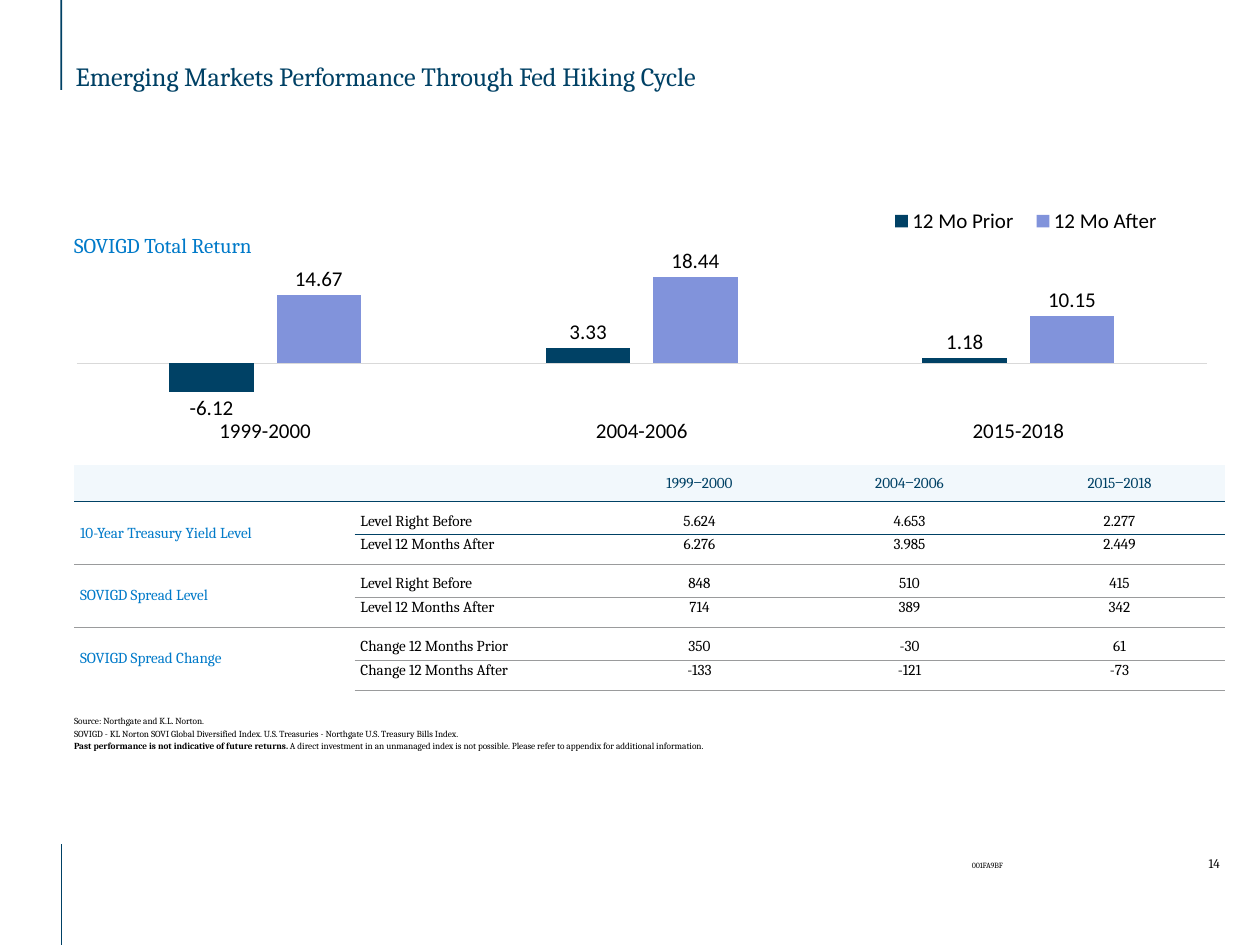
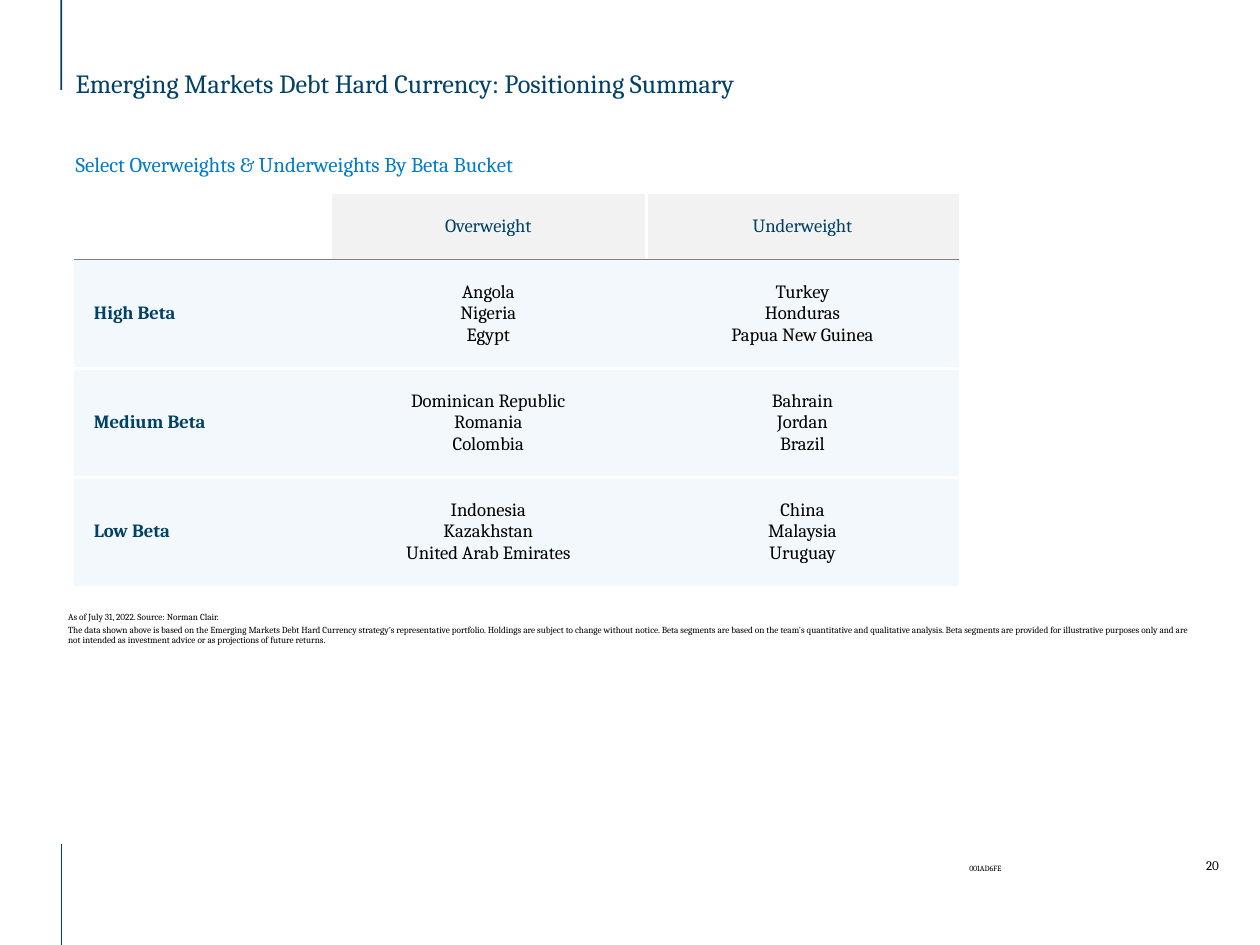
import pptx
import pptx.chart.data
import pptx.dml.color
import pptx.enum.chart
import pptx.enum.shapes
import pptx.enum.text
import pptx.oxml
import pptx.oxml.ns
import pptx.util
from lxml import etree

Cm, Pt = pptx.util.Cm, pptx.util.Pt
RGB = pptx.dml.color.RGBColor
ALIGN = pptx.enum.text.PP_ALIGN
ANCHOR = pptx.enum.text.MSO_ANCHOR
qn = pptx.oxml.ns.qn

# Colours
NAVY = RGB(0x00, 0x41, 0x65)
BLUE = RGB(0x00, 0x7A, 0xC9)
LILAC = RGB(0x81, 0x93, 0xDB)
PALE = RGB(0xF2, 0xF8, 0xFC)
MIST = RGB(0xF2, 0xF2, 0xF2)
SILVER = RGB(0xD9, 0xD9, 0xD9)
ASH = RGB(0x9A, 0x9B, 0x9C)
GREY = RGB(0x80, 0x80, 0x80)
WHITE = RGB(0xFF, 0xFF, 0xFF)
BLACK = RGB(0, 0, 0)

# Text formats
TITLE = dict(name="Cambria", size=Pt(22.5), rgb=NAVY)
HEAD = dict(name="Cambria", size=Pt(18), rgb=BLUE)
NOTE = dict(name="Cambria", size=Pt(7.9), rgb=BLACK)
CODE = dict(name="Cambria", size=Pt(6.8), rgb=BLACK)
PAGE = dict(name="Cambria", size=Pt(11.2), rgb=BLACK)
CELL = dict(name="Cambria", size=Pt(13), rgb=BLACK)
BIG = CELL | dict(size=Pt(16))
CHART = dict(name="Calibri", size=Pt(18), rgb=BLACK)

LEFT = 2.24
NO_STYLE = "{2D5ABB26-0587-4C30-8999-92F81FD0307C}"


def style(font, form):
    for key, val in form.items():
        setattr(font.color if key == "rgb" else font, key, val)


def fill_text(frame, paras, form, look=None, track=0):
    """Each paragraph is a list of (text, extra format) runs or a string."""
    for num, runs in enumerate(paras):
        para = frame.add_paragraph() if num else frame.paragraphs[0]
        for key, val in (look or {}).items():
            setattr(para, key, val)
        for text, extra in [(runs, {})] if isinstance(runs, str) else runs:
            run = para.add_run()
            run.text = text
            style(run.font, form | extra)
            if track:
                run._r.get_or_add_rPr().set("spc", str(track))


def add_text(slide, box, paras, form, look=None, track=0, inset=(0, 0),
             anchor=ANCHOR.TOP):
    frame = slide.shapes.add_textbox(*map(Cm, box)).text_frame
    left, top = map(Cm, inset)
    attrs = dict(word_wrap=True, vertical_anchor=anchor, margin_left=left,
                 margin_top=top, margin_right=0, margin_bottom=0)
    for key, val in attrs.items():
        setattr(frame, key, val)
    fill_text(frame, paras, form, look, track)


def add_note(slide, left, top, paras):
    look = dict(line_spacing=0.95, space_after=Pt(1.5))
    add_text(slide, (left, top, 33.96, 1.27), paras, NOTE, look, -3,
             anchor=ANCHOR.BOTTOM)


def add_base(deck, title, top, code, page, shift=0):
    """Blank slide with margin rules, title and footer."""
    slide = deck.slides.add_slide(deck.slide_layouts[6])
    bar = slide.shapes.add_shape(
        pptx.enum.shapes.MSO_SHAPE.RECTANGLE,
        Cm(1.83), 0, Cm(0.05), Cm(2.72))
    bar.shadow.inherit = False
    bar.fill.solid()
    bar.fill.fore_color.rgb = NAVY
    bar.line.fill.background()
    rule = slide.shapes.add_connector(
        pptx.enum.shapes.MSO_CONNECTOR.STRAIGHT,
        Cm(1.86), Cm(25.53), Cm(1.86), Cm(28.58))
    rule.line.color.rgb = NAVY
    rule.line.width = Pt(1)
    etree.SubElement(rule._element.spPr, qn("a:effectLst"))
    pad = (0.05, 0.08)
    add_text(slide, (LEFT, top, 33.9, 1), [title], TITLE, None, -8, pad)
    add_text(slide, (29.34 - shift, 25.96 + shift, 1.8, 0.33), [code], CODE,
             None, -10, pad)
    add_text(slide, (36.5 - shift, 25.78 + shift, 0.8, 0.5), [page], PAGE,
             None, -10, pad)
    return slide


# Tables
def add_grid(slide, top, cols, rows):
    frame = slide.shapes.add_table(
        len(rows), len(cols), Cm(LEFT), Cm(top), Cm(sum(cols)), Cm(sum(rows)))
    grid = frame.table
    grid.first_row = grid.horz_banding = False
    grid._tbl.tblPr.find(qn("a:tableStyleId")).text = NO_STYLE
    for col, wide in zip(grid.columns, cols):
        col.width = Cm(wide)
    for row, high in zip(grid.rows, rows):
        row.height = Cm(high)
    return grid


def set_cell(cell, paras, form, fill, edges, pads, align=ALIGN.CENTER):
    """Edges map L, R, T, B (in that order) to (colour, points)."""
    props = cell._tc.get_or_add_tcPr()
    for side, (color, width) in edges.items():
        line = etree.SubElement(props, qn("a:ln" + side), w=str(Pt(width)))
        solid = etree.SubElement(line, qn("a:solidFill"))
        etree.SubElement(solid, qn("a:srgbClr"), val=str(color))
    if fill is None:
        cell.fill.background()
    else:
        cell.fill.solid()
        cell.fill.fore_color.rgb = fill
    cell.vertical_anchor = ANCHOR.MIDDLE
    for side, pad in zip(("left", "top", "right", "bottom"), pads):
        setattr(cell, "margin_" + side, Cm(pad))
    fill_text(cell.text_frame, paras, form, dict(alignment=align))


def add_rates(slide, heads, groups):
    grid = add_grid(slide, 14.05, (8.48, 7.24, 6.38, 6.32, 6.38),
                    [0.99] + [1, 0.9] * len(groups))
    top_line, low_line = (NAVY, 0.5), (ASH, 0.5)
    for col, head in enumerate(["", "", *heads]):
        set_cell(grid.cell(0, col), [head] if head else [],
                 CELL | dict(rgb=NAVY), PALE, dict(B=top_line),
                 (0, 0.18, 0, 0.18))
    grid.cell(0, 0).merge(grid.cell(0, 1))
    for num, (label, *lines) in enumerate(groups):
        row = 1 + 2 * num
        above = low_line if num else top_line
        for part, line in enumerate(lines):
            edges = dict(B=low_line) if part else dict(T=above)
            high, low = (0, 0.28) if part else (0.28, 0.1)
            set_cell(grid.cell(row + part, 0), [] if part else [label],
                     CELL | dict(rgb=BLUE), WHITE, edges,
                     (0.18, 0, 0, 0), ALIGN.LEFT)
            for col, text in enumerate(line, 1):
                first = col == 1
                set_cell(grid.cell(row + part, col), [text], CELL, WHITE,
                         edges, (0.18 if first else 0, high, 0, low),
                         ALIGN.LEFT if first else ALIGN.CENTER)
        grid.cell(row, 0).merge(grid.cell(row + 1, 0))


def add_betas(slide, heads, groups):
    grid = add_grid(slide, 5.87, (7.75, 9.55, 9.45),
                    [1.89] + [3.3] * len(groups))
    gap, rule = (WHITE, 3), (GREY, 0.75)
    pads = (0.6,) * 4
    navy = BIG | dict(rgb=NAVY)
    for col, head in enumerate(["", *heads]):
        edges = dict(L=gap) if col else {}
        if col < len(heads):
            edges["R"] = gap
        set_cell(grid.cell(0, col), [head] if head else [], navy,
                 MIST if head else None, edges | dict(B=rule), pads)
    for row, (label, *lists) in enumerate(groups, 1):
        edges = dict(T=gap if row > 1 else rule)
        if row < len(groups):
            edges["B"] = gap
        set_cell(grid.cell(row, 0), [label], navy | dict(bold=True), PALE,
                 edges, pads, ALIGN.LEFT)
        for col, names in enumerate(lists, 1):
            set_cell(grid.cell(row, col), names, BIG, PALE, edges, pads)


# Chart
def set_place(owner, inner, x, y, w, h):
    """Give a plot area or legend a manual layout."""
    for old in owner.findall(qn("c:layout")):
        owner.remove(old)
    layout = etree.Element(qn("c:layout"))
    manual = etree.SubElement(layout, qn("c:manualLayout"))
    marks = dict(layoutTarget="inner") if inner else {}
    marks |= dict(xMode="edge", yMode="edge", x=x, y=y, w=w, h=h)
    for key, val in marks.items():
        etree.SubElement(manual, qn("c:" + key), val=str(val))
    owner.insert(0 if inner else 1, layout)


def add_bars(slide, cats, series):
    enum = pptx.enum.chart
    data = pptx.chart.data.CategoryChartData()
    data.categories = cats
    for name, _, vals in series:
        data.add_series(name, vals)
    chart = slide.shapes.add_chart(
        enum.XL_CHART_TYPE.COLUMN_CLUSTERED,
        Cm(2.31), Cm(5.92), Cm(34.19), Cm(8.08), data).chart
    style(chart.font, CHART)
    chart.has_title = False
    chart.has_legend = True
    chart.legend.position = enum.XL_LEGEND_POSITION.BOTTOM
    chart.legend.include_in_layout = False
    style(chart.legend.font, CHART)
    set_place(chart.legend._element, False, 0.71, 0.04, 0.26, 0.11)
    set_place(chart._chartSpace.chart.plotArea, True, 0, 0.277, 1, 0.525)
    # Axes
    axis = chart.value_axis
    attrs = dict(minimum_scale=-10, maximum_scale=20, visible=False,
                 has_major_gridlines=False)
    for key, val in attrs.items():
        setattr(axis, key, val)
    axis = chart.category_axis
    axis.tick_label_position = enum.XL_TICK_LABEL_POSITION.LOW
    axis.major_tick_mark = enum.XL_TICK_MARK.NONE
    axis.format.line.color.rgb = SILVER
    axis.format.line.width = Pt(0.75)
    style(axis.tick_labels.font, CHART)
    # Columns
    plot = chart.plots[0]
    plot.gap_width, plot.overlap = 219, -27
    plot.vary_by_categories = False
    for bars, (_, color, _) in zip(plot.series, series):
        bars.invert_if_negative = False
        bars.format.fill.solid()
        bars.format.fill.fore_color.rgb = color
        labels = bars.data_labels
        labels.show_value = True
        labels.position = enum.XL_LABEL_POSITION.OUTSIDE_END
        style(labels.font, CHART)


def main():
    deck = pptx.Presentation()
    deck.slide_width, deck.slide_height = Cm(38.1), Cm(28.58)

    # Hiking cycle
    slide = add_base(
        deck, "Emerging Markets Performance Through Fed Hiking Cycle", 1.73,
        "001FA9BF", "14")
    add_note(slide, LEFT, 21.46, [
        "Source: Northgate and K.L. Norton.",
        "SOVIGD - KL Norton SOVI Global Diversified Index. U.S. Treasuries "
        "- Northgate U.S. Treasury Bills Index.",
        [("Past performance is not indicative of future returns. ",
          dict(bold=True)),
         ("A direct investment in an unmanaged index is not possible. Please "
          "refer to appendix for additional information.", {})]])
    add_rates(slide, ["1999‒2000", "2004‒2006", "2015‒2018"], [
        ("10-Year Treasury Yield Level",
         ("Level Right Before", "5.624", "4.653", "2.277"),
         ("Level 12 Months After", "6.276", "3.985", "2.449")),
        ("SOVIGD Spread Level",
         ("Level Right Before", "848", "510", "415"),
         ("Level 12 Months After", "714", "389", "342")),
        ("SOVIGD Spread Change",
         ("Change 12 Months Prior", "350", "-30", "61"),
         ("Change 12 Months After", "-133", "-121", "-73"))])
    add_bars(slide, ["1999-2000", "2004-2006", "2015-2018"], [
        ("12 Mo Prior", NAVY, (-6.12, 3.33, 1.18)),
        ("12 Mo After", LILAC, (14.67, 18.44, 10.15))])
    add_text(slide, (LEFT, 7.04, 9.07, 0.76), ["SOVIGD Total Return"], HEAD)

    # Positioning
    slide = add_base(
        deck, "Emerging Markets Debt Hard Currency: Positioning Summary",
        1.96, "001AD6FE", "20", 0.08)
    add_note(slide, 2.06, 18.26, [
        "As of July 31, 2022. Source: Norman Clair.",
        "The data shown above is based on the Emerging Markets Debt Hard "
        "Currency strategy’s representative portfolio. Holdings are subject "
        "to change without notice. Beta segments are based on the team's "
        "quantitative and qualitative analysis. Beta segments are provided "
        "for illustrative purposes only and are not intended as investment "
        "advice or as projections of future returns."])
    add_text(slide, (LEFT, 4.5, 14.78, 0.81),
             ["Select Overweights & Underweights By Beta Bucket"], HEAD,
             inset=(0.05, 0.08))
    add_betas(slide, ["Overweight", "Underweight"], [
        ("High Beta", ["Angola", "Nigeria", "Egypt"],
         ["Turkey", "Honduras", "Papua New Guinea"]),
        ("Medium Beta", ["Dominican Republic", "Romania", "Colombia"],
         ["Bahrain", "Jordan", "Brazil"]),
        ("Low Beta", ["Indonesia", "Kazakhstan", "United Arab Emirates"],
         ["China", "Malaysia", "Uruguay"])])
    deck.save("out.pptx")


if __name__ == "__main__":
    main()
